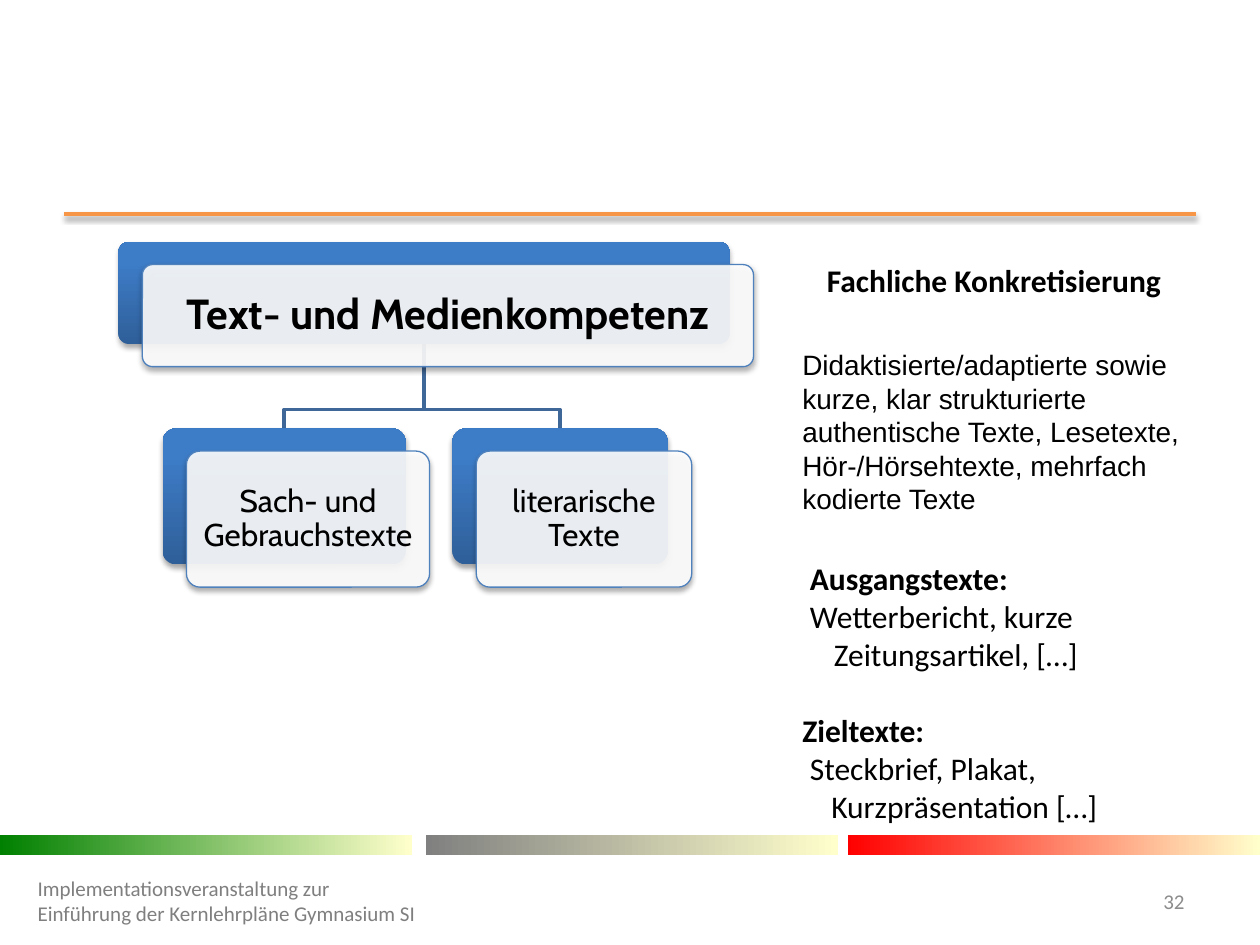
from lxml.etree import SubElement
from pptx import Presentation
from pptx.dml.color import RGBColor
from pptx.enum.shapes import MSO_CONNECTOR, MSO_SHAPE
from pptx.enum.text import MSO_ANCHOR, PP_ALIGN
from pptx.oxml.ns import qn
from pptx.util import Inches, Pt


def rgb(value):
    return RGBColor.from_string(value)


class SlideBuilder:
    black = "000000"
    accent = "4F81BD"
    branch_color = "3F6797"
    card_top, card_bottom = "3D7CC7", "2F5F99"
    offset_x, offset_y = 0.19, 0.18

    def __init__(self, prs):
        self.s = prs.slides.add_slide(prs.slide_layouts[6])

    def shadow(self, sp, alpha=35):
        effects = SubElement(sp._element.spPr, qn("a:effectLst"))
        outer = SubElement(effects, qn("a:outerShdw"), blurRad=str(Pt(3.1)),
                           dist=str(Pt(1.8)), dir="5400000", rotWithShape="0")
        color = SubElement(outer, qn("a:srgbClr"), val=self.black)
        SubElement(color, qn("a:alpha"), val=str(alpha * 1000))

    def rule(self, x1, x2, y, color, width):
        sp = self.s.shapes.add_connector(MSO_CONNECTOR.STRAIGHT, Inches(x1), Inches(y),
                                         Inches(x2), Inches(y))
        sp.line.color.rgb = rgb(color)
        sp.line.width = Pt(width)
        self.shadow(sp, 38)

    def branch(self, points):
        x, y = points[0]
        builder = self.s.shapes.build_freeform(Inches(x), Inches(y))
        builder.add_line_segments([(Inches(x), Inches(y)) for x, y in points[1:]], close=False)
        sp = builder.convert_to_shape()
        sp.shadow.inherit = False
        sp.fill.background()
        sp.line.color.rgb = rgb(self.branch_color)
        sp.line.width = Pt(2)

    def shape(self, kind, x, y, w, h):
        sp = self.s.shapes.add_shape(kind, Inches(x), Inches(y), Inches(w), Inches(h))
        sp.line.fill.background()
        return sp

    def gradient(self, sp, colors, angle, end=1):
        sp.fill.gradient()
        sp.fill.gradient_angle = angle
        for stop, color, position in zip(sp.fill.gradient_stops, colors, (0, end)):
            stop.color.rgb = rgb(color)
            stop.position = position

    def bar(self, x, color):
        sp = self.shape(MSO_SHAPE.RECTANGLE, x, 6.63, 3.27, 0.16)
        sp.shadow.inherit = False
        self.gradient(sp, (color, "FFFFCC"), 0)

    def card(self, x, y, w, h, text, size, bold=False):
        back = self.shape(MSO_SHAPE.ROUNDED_RECTANGLE, x, y, w, h)
        self.gradient(back, (self.card_bottom, self.card_top), 90, 0.8)
        front = self.shape(MSO_SHAPE.ROUNDED_RECTANGLE, x + self.offset_x,
                           y + self.offset_y, w, h)
        front.fill.solid()
        front.fill.fore_color.rgb = rgb("FFFFFF")
        color = front._element.spPr.find(qn("a:solidFill")).find(qn("a:srgbClr"))
        SubElement(color, qn("a:alpha"), val="90000")
        front.line.color.rgb = rgb(self.accent)
        front.line.width = Pt(0.75)
        for sp in (back, front):
            sp.adjustments[0] = 0.1
            self.shadow(sp)
        tf = front.text_frame
        tf.word_wrap = True
        tf.vertical_anchor = MSO_ANCHOR.MIDDLE
        self.paragraph(tf.paragraphs[0], text, font="Cabin", size=size, bold=bold,
                       alignment=PP_ALIGN.CENTER, line_spacing=0.9)

    def paragraph(self, p, text, font="Calibri", size=18, bold=False, color=black,
                  left=0, first=0, **layout):
        for name, value in layout.items():
            setattr(p, name, value)
        pPr = p._p.get_or_add_pPr()
        pPr.set("marL", str(Inches(left)))
        pPr.set("indent", str(Inches(first)))
        r = p.add_run()
        r.text = text
        for name, value in {"name": font, "size": Pt(size), "bold": bold}.items():
            setattr(r.font, name, value)
        r.font.color.rgb = rgb(color)

    def text(self, x, y, w, h, items, anchor=MSO_ANCHOR.TOP):
        tf = self.s.shapes.add_textbox(Inches(x), Inches(y), Inches(w), Inches(h)).text_frame
        tf.word_wrap = True
        tf.vertical_anchor = anchor
        for i, (text, fmt) in enumerate(items):
            p = tf.add_paragraph() if i else tf.paragraphs[0]
            self.paragraph(p, text, **fmt)


def main():
    prs = Presentation()
    prs.slide_width, prs.slide_height = Inches(10), Inches(7.5)
    b = SlideBuilder(prs)

    b.rule(0.51, 9.49, 1.7, "F79646", 2)
    for x, color in ((0, "008000"), (3.38, "808080"), (6.73, "FF0000")):
        b.bar(x, color)

    root_x, root_y, root_w, root_h = 0.94, 1.92, 4.85, 0.81
    child_y, child_h, bend_y = 3.4, 1.08, 3.25
    children = ((3.59, 1.71, "literarische Texte"), (1.29, 1.93, "Sach- und Gebrauchstexte"))
    middle, bottom = root_x + root_w / 2, root_y + root_h
    for x, w, text in children:
        center = x + w / 2
        b.branch([(middle, bottom), (middle, bend_y), (center, bend_y), (center, child_y)])
    b.card(root_x, root_y, root_w, root_h, "Text- und Medienkompetenz", 24, True)
    for x, w, text in reversed(children):
        b.card(x, child_y, w, child_h, text, 18)

    b.text(6.27, 2.02, 3.24, 4.64, [
        ("Fachliche Konkretisierung", {"bold": True, "alignment": PP_ALIGN.CENTER}),
        ("Didaktisierte/adaptierte sowie kurze, klar strukturierte authentische Texte, "
         "Lesetexte, Hör-/Hörsehtexte, mehrfach kodierte Texte",
         {"font": "Arial", "size": 16, "space_before": Pt(28)}),
        ("Ausgangstexte:", {"bold": True, "left": 0.06, "space_before": Pt(25)}),
        ("Wetterbericht, kurze Zeitungsartikel, […]", {"left": 0.25, "first": -0.19}),
        ("Zieltexte:", {"bold": True, "space_before": Pt(22)}),
        ("Steckbrief, Plakat,", {"left": 0.06}),
        ("Kurzpräsentation […]", {"left": 0.23}),
    ])
    b.text(0.2, 6.95, 3.24, 0.4, [
        ("Implementationsveranstaltung zur Einführung der Kernlehrpläne Gymnasium SI",
         {"size": 12, "color": "7F7F7F"})], MSO_ANCHOR.MIDDLE)
    b.text(8.86, 6.95, 0.64, 0.4, [
        ("32", {"size": 12, "color": "8C8C8C", "alignment": PP_ALIGN.RIGHT})],
        MSO_ANCHOR.MIDDLE)
    prs.save("out.pptx")


if __name__ == "__main__":
    main()
